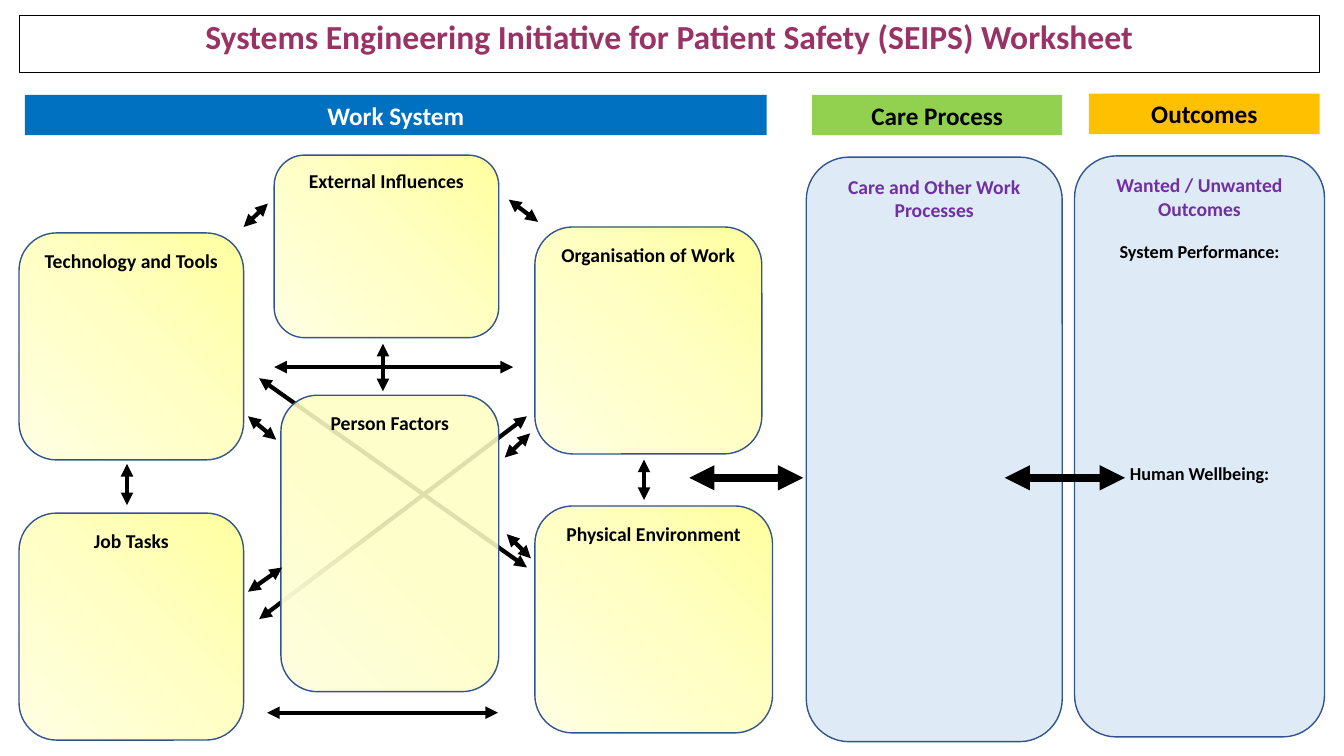
from dataclasses import dataclass

from lxml.etree import SubElement
from pptx import Presentation
from pptx.dml.color import RGBColor
from pptx.enum.shapes import MSO_CONNECTOR, MSO_SHAPE
from pptx.enum.text import MSO_ANCHOR, MSO_AUTO_SIZE, PP_ALIGN
from pptx.oxml.ns import qn
from pptx.util import Cm, Pt


@dataclass(frozen=True)
class Theme:
    font: str = "Calibri"
    black: str = "000000"
    white: str = "FFFFFF"
    title: str = "993366"
    outline: str = "325491"
    panel: str = "DEEBF7"
    panel_heading: str = "7030A0"
    work: str = "0070C0"
    care: str = "92D050"
    outcomes: str = "FFC000"
    card: tuple = ((0, "FFFFA0", 100), (50, "FFFFC5", 100), (100, "FFFFE3", 100))
    person: tuple = ((50, "FFFFC5", 88), (100, "FFFFE3", 100))
    title_size: float = 24
    header_size: float = 18
    heading_size: float = 14
    label_size: float = 13
    thin: float = 3
    thick: float = 6


@dataclass(frozen=True)
class Box:
    left: float
    top: float
    width: float
    height: float

    def inner(self, left, top, width, height):
        return Box(self.left + left, self.top + top, width, height)


THEME = Theme()

CARDS = [
    ("Technology and Tools", 0, 3.48, 5.66, 5.72),
    ("Job Tasks", 0, 10.54, 5.66, 5.72),
    ("Physical Environment", 13, 10.36, 5.99, 5.72),
    ("Organisation of Work", 13, 3.33, 5.72, 5.72),
    ("External Influences", 6.43, 1.52, 5.66, 4.6),
]
DIAGONALS = [
    (6.05, 13.21, 12.8, 8.1),
    (6.05, 7.14, 12.8, 11.91),
]
LINKS = [
    (12.29, 11.07, 12.9, 11.68),
    (6.63, 11.91, 5.77, 12.52),
    (12.88, 8.53, 12.24, 9.14),
    (5.77, 8.1, 6.48, 8.69),
    (6.25, 15.57, 12.07, 15.57),
    (6.43, 6.86, 12.45, 6.86),
    (15.75, 9.19, 15.75, 10.21),
    (2.72, 9.3, 2.72, 10.34),
    (6.27, 2.74, 5.66, 3.33),
    (12.34, 2.64, 13.08, 3.2),
    (9.17, 6.27, 9.17, 7.47),
]


def rgb(colour):
    return RGBColor.from_string(colour)


def write(para, text, size, colour, space_before=0):
    para.alignment = PP_ALIGN.CENTER
    para.space_before = Pt(space_before)
    span = para.add_run()
    span.text = text
    span.font.name = THEME.font
    span.font.size = Pt(size)
    span.font.bold = True
    span.font.color.rgb = rgb(colour)


def add_block(page, preset, box, anchor):
    shape = page.shapes.add_shape(
        preset, Cm(box.left), Cm(box.top), Cm(box.width), Cm(box.height))
    shape.shadow.inherit = False
    shape.text_frame.word_wrap = True
    shape.text_frame.vertical_anchor = anchor
    return shape


def add_rounded(page, box):
    shape = add_block(page, MSO_SHAPE.ROUNDED_RECTANGLE, box, MSO_ANCHOR.TOP)
    shape.line.color.rgb = rgb(THEME.outline)
    shape.line.width = Pt(1)
    return shape


def fill_from_corner(shape, stops):
    shape.fill.gradient()
    gradient = shape.element.spPr.find(qn("a:gradFill"))
    for child in list(gradient):
        gradient.remove(child)
    stop_list = SubElement(gradient, qn("a:gsLst"))
    for position, colour, opacity in stops:
        stop = SubElement(stop_list, qn("a:gs"), pos=str(position * 1000))
        tint = SubElement(stop, qn("a:srgbClr"), val=colour)
        if opacity < 100:
            SubElement(tint, qn("a:alpha"), val=str(opacity * 1000))
    circle = SubElement(gradient, qn("a:path"), path="circle")
    SubElement(circle, qn("a:fillToRect"), l="100000", b="100000")


def add_card(page, box, heading, stops):
    card = add_rounded(page, box)
    fill_from_corner(card, stops)
    write(card.text_frame.paragraphs[0], heading, THEME.heading_size, THEME.black)


def add_header(page, box, text, fill, colour):
    header = add_block(page, MSO_SHAPE.RECTANGLE, box, MSO_ANCHOR.MIDDLE)
    header.fill.solid()
    header.fill.fore_color.rgb = rgb(fill)
    header.line.fill.background()
    write(header.text_frame.paragraphs[0], text, THEME.header_size, colour)


def add_arrow(page, box, ends, weight):
    x1, y1, x2, y2 = ends
    arrow = page.shapes.add_connector(
        MSO_CONNECTOR.STRAIGHT, Cm(box.left + x1), Cm(box.top + y1),
        Cm(box.left + x2), Cm(box.top + y2))
    arrow.line.color.rgb = rgb(THEME.black)
    arrow.line.width = Pt(weight)
    line = arrow.line._get_or_add_ln()
    for end in ("a:headEnd", "a:tailEnd"):
        SubElement(line, qn(end), type="triangle")
    SubElement(arrow.element.spPr, qn("a:effectLst"))


def place_title(page, box):
    title = page.shapes.title
    title.left, title.top = Cm(box.left), Cm(box.top)
    title.width, title.height = Cm(box.width), Cm(box.height)
    title.line.color.rgb = rgb(THEME.black)
    title.line.width = Pt(0.25)
    frame = title.text_frame
    frame.auto_size = MSO_AUTO_SIZE.NONE
    frame.word_wrap = True
    frame.vertical_anchor = MSO_ANCHOR.TOP
    para = frame.paragraphs[0]
    para.line_spacing = 0.9
    write(para, "Systems Engineering Initiative for Patient Safety (SEIPS) Worksheet",
          THEME.title_size, THEME.title)


def place_work_system(page, box):
    for ends in DIAGONALS:
        add_arrow(page, box, ends, THEME.thin)
    add_card(page, box.inner(6.6, 7.57, 5.49, 7.47), "Person Factors", THEME.person)
    for heading, *area in CARDS:
        add_card(page, box.inner(*area), heading, THEME.card)
    for ends in LINKS:
        add_arrow(page, box, ends, THEME.thin)
    add_header(page, box.inner(0.15, 0, 18.69, 1.02), "Work System",
               THEME.work, THEME.white)


def place_column(page, box, header, fill, inset, header_width, lines):
    panel_top = 1.57
    panel = add_rounded(
        page, box.inner(0, panel_top, box.width, box.height - panel_top))
    panel.fill.solid()
    panel.fill.fore_color.rgb = rgb(THEME.panel)
    frame = panel.text_frame
    for index, line in enumerate(lines):
        para = frame.add_paragraph() if index else frame.paragraphs[0]
        write(para, *line)
    add_header(page, box.inner(inset, 0, header_width, 1.02), header, fill, THEME.black)


def main():
    deck = Presentation()
    deck.slide_width, deck.slide_height = Cm(33.87), Cm(19.05)
    page = deck.slides.add_slide(deck.slide_layouts[5])
    place_title(page, Box(0.48, 0.38, 32.77, 1.45))
    work = Box(0.48, 2.39, 18.99, 16.26)
    place_work_system(page, work)
    heading = (THEME.heading_size, THEME.panel_heading)
    label = (THEME.label_size, THEME.black)
    place_column(page, Box(20.32, 2.39, 6.45, 16.3), "Care Process", THEME.care,
                 0.15, 6.3, [("Care and Other Work Processes", *heading)])
    place_column(page, Box(27.08, 2.36, 6.3, 16.21), "Outcomes", THEME.outcomes,
                 0.36, 5.82, [("Wanted / Unwanted", *heading),
                              ("Outcomes", *heading),
                              ("System Performance:", *label, 14.2),
                              ("Human Wellbeing:", *label, 143.4)])
    for start, end in ((16.89, 19.76), (24.84, 27.87)):
        add_arrow(page, work, (start, 9.65, end, 9.65), THEME.thick)
    deck.save("out.pptx")


if __name__ == "__main__":
    main()
